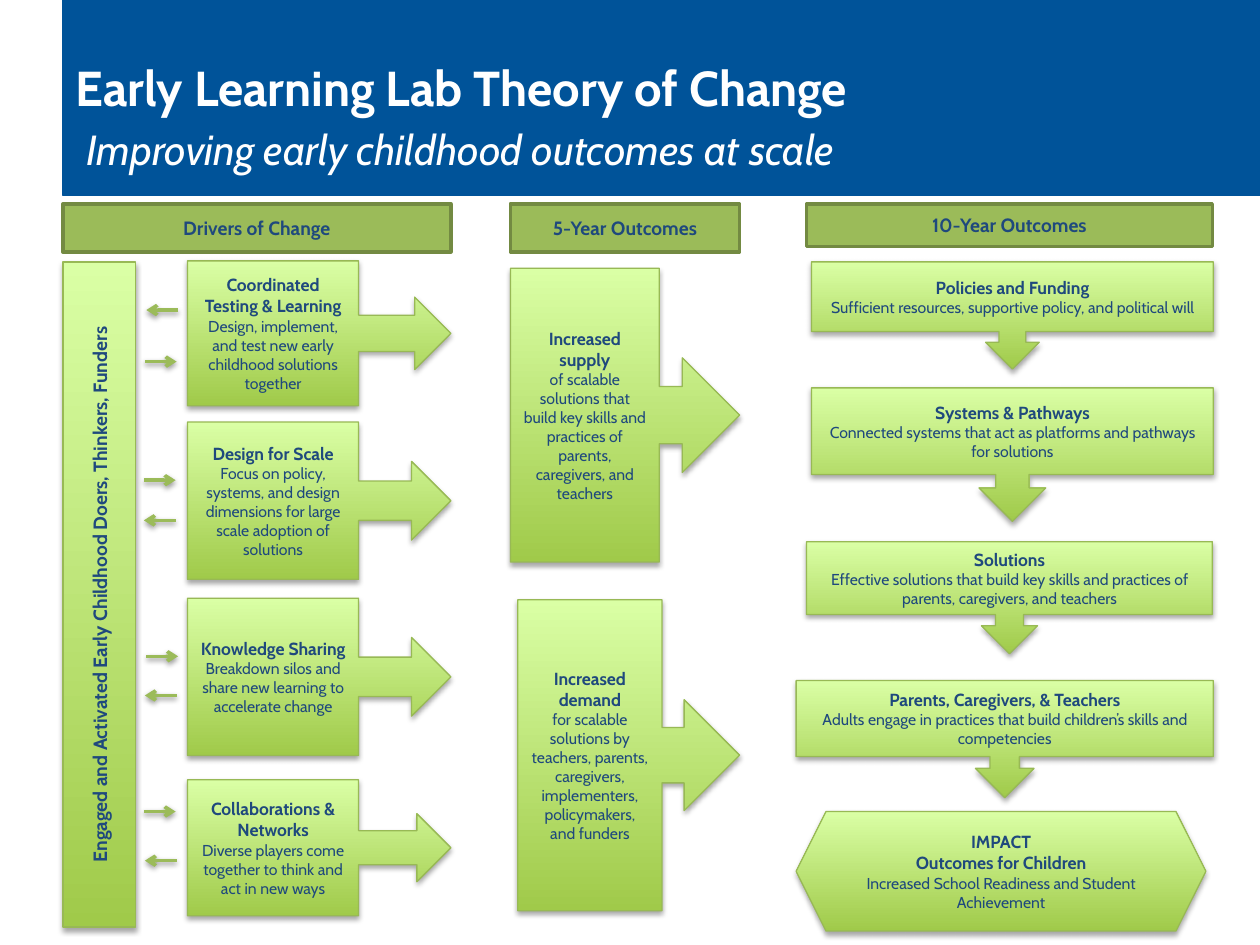
import pptx
import pptx.util
import pptx.dml.color
import pptx.enum.shapes
import pptx.enum.text
import pptx.oxml.ns
import lxml.etree

Cm, Pt = pptx.util.Cm, pptx.util.Pt
SHAPE = pptx.enum.shapes.MSO_SHAPE
ALIGN = pptx.enum.text.PP_ALIGN

FONT = "Cabin"
COLORS = {
    "banner": "005399", "white": "FFFFFF", "text": "1F497D",
    "header": "9BBB59", "header edge": "738A42",
    "deep": "A0CA4A", "light": "DAFFA5", "edge": "98B955", "shadow": "000000",
}

# Content: places are left, top, width, height in centimetres
TITLE = "Early Learning Lab Theory of Change"
SUBTITLE = "Improving early childhood outcomes at scale"
ACTORS = "Engaged and Activated Early Childhood Doers, Thinkers, Funders"
HEADERS = [
    ("Drivers of Change", (1.27, 4.11, 7.82, 0.97)),
    ("5-Year Outcomes", (10.29, 4.11, 4.62, 0.97)),
    ("10-Year Outcomes", (16.26, 4.11, 8.18, 0.86)),
]
DRIVERS = [
    (["Coordinated Testing & Learning"],
     "Design, implement, and test new early childhood solutions together",
     (3.78, 5.26, 5.31, 2.92)),
    (["Design for Scale"],
     "Focus on policy, systems, and design dimensions for large scale adoption of solutions",
     (3.78, 8.51, 5.31, 3.17)),
    (["Knowledge Sharing"],
     "Breakdown silos and share new learning to accelerate change",
     (3.78, 12.06, 5.31, 3.17)),
    (["Collaborations & Networks"],
     "Diverse players come together to think and act in new ways",
     (3.78, 15.72, 5.31, 2.74)),
]
FIVE_YEAR = [
    (["Increased supply"],
     "of scalable solutions that build key skills and practices of parents, "
     "caregivers, and teachers",
     (10.29, 5.41, 4.62, 5.92)),
    (["Increased demand"],
     "for scalable solutions by teachers, parents, caregivers, implementers, "
     "policymakers, and funders",
     (10.44, 12.09, 4.47, 6.27)),
]
TEN_YEAR = [
    (["Policies and Funding"],
     "Sufficient resources, supportive policy, and political will",
     (16.36, 5.28, 8.1, 2.16)),
    (["Systems & Pathways"],
     "Connected systems that act as platforms and pathways for solutions",
     (16.36, 7.82, 8.1, 2.69)),
    (["Solutions"],
     "Effective solutions that build key skills and practices of parents, "
     "caregivers, and teachers",
     (16.26, 10.92, 8.18, 2.26)),
    (["Parents, Caregivers, & Teachers"],
     "Adults engage in practices that build children’s skills and competencies",
     (16.05, 13.72, 8.41, 2.36)),
]
IMPACT = [
    (["IMPACT", "Outcomes for Children"],
     "Increased School Readiness and Student Achievement",
     (16.05, 16.36, 8.26, 2.41)),
]
# Exchange arrows: left end, height on the page, direction (1 = right, -1 = left)
ARROW_LENGTH = 0.64
ARROWS = [
    (2.92, 7.29, 1), (2.9, 9.68, 1), (2.95, 13.23, 1), (2.9, 16.36, 1),
    (2.9, 10.49, -1), (2.95, 6.25, -1), (2.92, 14.02, -1), (2.92, 17.35, -1),
]


def rgb(name):
    return pptx.dml.color.RGBColor.from_string(COLORS[name])


def set_font(font, size, color="text", bold=False, italic=False):
    font.name, font.size, font.bold, font.italic = FONT, Pt(size), bold, italic
    font.color.rgb = rgb(color)


def set_line(line, color, width):
    line.color.rgb = rgb(color)
    line.width = Pt(width)


def add_block(page, kind, place, fill, edge, width):
    block = page.shapes.add_shape(kind, *map(Cm, place))
    block.fill.solid()
    block.fill.fore_color.rgb = rgb(fill)
    set_line(block.line, edge, width)
    block.shadow.inherit = False
    return block


def write(block, lines):
    """Fill a block with centred (text, size, bold) lines."""
    frame = block.text_frame
    frame.word_wrap = True
    frame.vertical_anchor = pptx.enum.text.MSO_ANCHOR.MIDDLE
    for index, (text, size, bold) in enumerate(lines):
        para = frame.add_paragraph() if index else frame.paragraphs[0]
        para.text = text
        para.alignment = ALIGN.CENTER
        set_font(para.font, size, bold=bold)


def add_shadow(item, alpha, blur, distance):
    qn = pptx.oxml.ns.qn
    props = item._element.spPr
    effects = props.find(qn("a:effectLst"))
    if effects is None:
        effects = lxml.etree.SubElement(props, qn("a:effectLst"))
    shadow = lxml.etree.SubElement(
        effects, qn("a:outerShdw"), blurRad=str(Pt(blur)), dist=str(Pt(distance)),
        dir="5400000", rotWithShape="0")
    color = lxml.etree.SubElement(shadow, qn("a:srgbClr"), val=COLORS["shadow"])
    lxml.etree.SubElement(color, qn("a:alpha"), val=str(alpha * 1000))


def add_green(page, kind, place, lines):
    block = add_block(page, kind, place, "deep", "edge", 0.75)
    block.fill.gradient()
    block.fill.gradient_angle = 90
    for stop, name in zip(block.fill.gradient_stops, ("deep", "light")):
        stop.color.rgb = rgb(name)
    add_shadow(block, 35, 3.1, 1.8)
    write(block, lines)
    return block


def add_arrow(page, left, height, direction):
    ends = (left, left + ARROW_LENGTH)[::direction]
    arrow = page.shapes.add_connector(
        pptx.enum.shapes.MSO_CONNECTOR.STRAIGHT,
        Cm(ends[0]), Cm(height), Cm(ends[1]), Cm(height))
    set_line(arrow.line, "header", 2)
    lxml.etree.SubElement(arrow.line._get_or_add_ln(),
                          pptx.oxml.ns.qn("a:tailEnd"), type="arrow")
    add_shadow(arrow, 38, 3.1, 1.6)


def add_title(page):
    add_block(page, SHAPE.RECTANGLE, (1.27, 0, 24.13, 3.94), "banner", "banner", 0.75)
    box = page.shapes.add_textbox(*map(Cm, (1.27, 0.76, 22.86, 3.18)))
    box.text_frame.word_wrap = True
    box.text_frame.vertical_anchor = pptx.enum.text.MSO_ANCHOR.MIDDLE
    para = box.text_frame.paragraphs[0]
    for text, size, bold in ((TITLE, 28, True), (" ", 28, True), (SUBTITLE, 24, False)):
        span = para.add_run()
        span.text = text
        set_font(span.font, size, "white", bold, italic=not bold)
        if text == TITLE:
            para.add_line_break()


def main():
    deck = pptx.Presentation()
    deck.slide_width, deck.slide_height = Cm(25.4), Cm(19.05)
    page = deck.slides.add_slide(deck.slide_layouts[6])

    add_title(page)

    # Vertical bar of actors
    actors = add_green(page, SHAPE.RECTANGLE, (1.27, 5.28, 1.47, 13.41),
                       [(ACTORS, 11, True)])
    actors.text_frame._txBody.bodyPr.set("vert", "vert270")

    # Column headers
    for text, place in HEADERS:
        header = add_block(page, SHAPE.RECTANGLE, place, "header", "header edge", 2)
        write(header, [(text, 11, True)])

    # Steps of each column
    for kind, steps in (
        (SHAPE.RIGHT_ARROW_CALLOUT, DRIVERS + FIVE_YEAR),
        (SHAPE.DOWN_ARROW_CALLOUT, TEN_YEAR),
        (SHAPE.HEXAGON, IMPACT),
    ):
        for headings, detail, place in steps:
            lines = [(heading, 10, True) for heading in headings]
            add_green(page, kind, place, lines + [(detail, 9, False)])

    # Exchange between actors and drivers
    for arrow in ARROWS:
        add_arrow(page, *arrow)

    deck.save("out.pptx")


if __name__ == "__main__":
    main()
